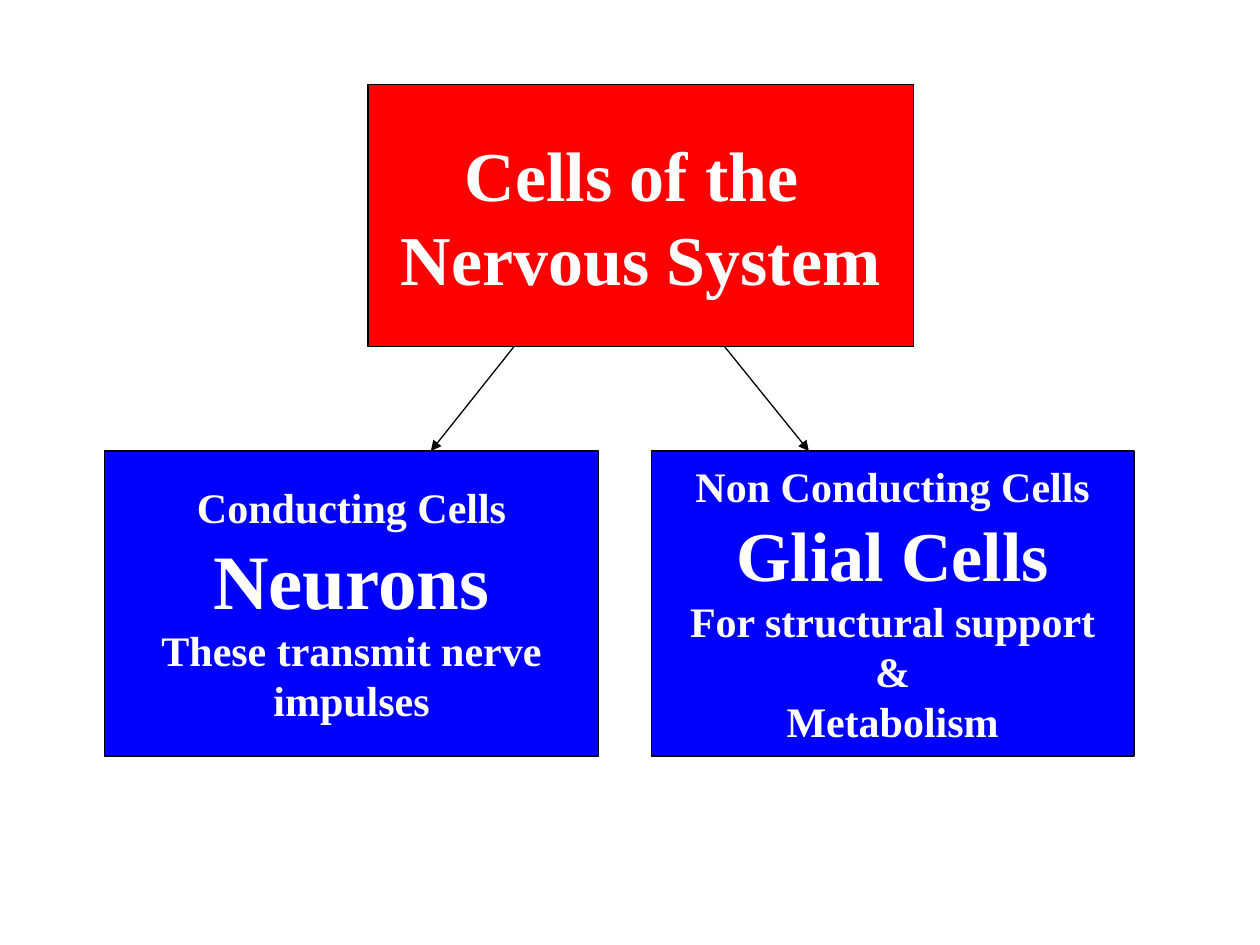
import pptx
import pptx.dml.color
import pptx.enum.shapes
import pptx.enum.text
import pptx.oxml.ns
import pptx.util
from lxml import etree
from pptx.util import Inches

FONT = "Times New Roman"
BLACK, WHITE, RED, BLUE = "000000", "FFFFFF", "FF0000", "0000FF"
TITLE_BOTTOM = 2.75
CELLS_TOP, CELLS_HEIGHT = 3.58, 2.42


def color(hex_string):
    return pptx.dml.color.RGBColor.from_string(hex_string)


def format_line(line):
    line.color.rgb = color(BLACK)
    line.width = pptx.util.Pt(0.75)


def format_box(shape, fill, lines):
    """Style a box and fill it with (text, point size) lines."""
    shape.fill.solid()
    shape.fill.fore_color.rgb = color(fill)
    format_line(shape.line)
    text_frame = shape.text_frame
    text_frame.text = "\n".join(text for text, size in lines)
    text_frame.word_wrap = False
    text_frame.auto_size = pptx.enum.text.MSO_AUTO_SIZE.NONE
    text_frame.vertical_anchor = pptx.enum.text.MSO_ANCHOR.MIDDLE
    for paragraph, (text, size) in zip(text_frame.paragraphs, lines):
        paragraph.alignment = pptx.enum.text.PP_ALIGN.CENTER
        font = paragraph.runs[0].font
        font.name = FONT
        font.size = pptx.util.Pt(size)
        font.bold = True
        font.color.rgb = color(WHITE)


def set_title(slide):
    title = slide.shapes.title
    title.left, title.top = Inches(2.92), Inches(0.67)
    title.width, title.height = Inches(4.33), Inches(2.08)
    format_box(title, RED, [("Cells of the ", 40), ("Nervous System", 40)])


def add_cell_box(slide, left, width, lines):
    shape = slide.shapes.add_shape(
        pptx.enum.shapes.MSO_SHAPE.RECTANGLE,
        Inches(left), Inches(CELLS_TOP), Inches(width), Inches(CELLS_HEIGHT))
    shape.shadow.inherit = False
    format_box(shape, BLUE, lines)


def add_arrow(slide, start_x, end_x):
    """Draw an arrow from the title box down to the row of cell boxes."""
    connector = slide.shapes.add_connector(
        pptx.enum.shapes.MSO_CONNECTOR.STRAIGHT,
        Inches(start_x), Inches(TITLE_BOTTOM), Inches(end_x), Inches(CELLS_TOP))
    format_line(connector.line)
    qn = pptx.oxml.ns.qn
    properties = connector.element.spPr
    etree.SubElement(properties.find(qn("a:ln")), qn("a:tailEnd"), type="triangle")
    etree.SubElement(properties, qn("a:effectLst"))


def main():
    presentation = pptx.Presentation()
    presentation.slide_width = Inches(10)
    presentation.slide_height = Inches(7.5)
    slide = presentation.slides.add_slide(presentation.slide_layouts[5])

    set_title(slide)
    add_cell_box(slide, 0.83, 3.92, [
        ("Conducting Cells", 24),
        ("Neurons", 44),
        ("These transmit nerve", 24),
        ("impulses", 24),
    ])
    add_cell_box(slide, 5.17, 3.83, [
        ("Non Conducting Cells", 24),
        ("Glial Cells", 40),
        ("For structural support", 24),
        ("&", 24),
        ("Metabolism", 24),
    ])
    add_arrow(slide, 4.08, 3.42)
    add_arrow(slide, 5.75, 6.42)
    presentation.save("out.pptx")


if __name__ == "__main__":
    main()
